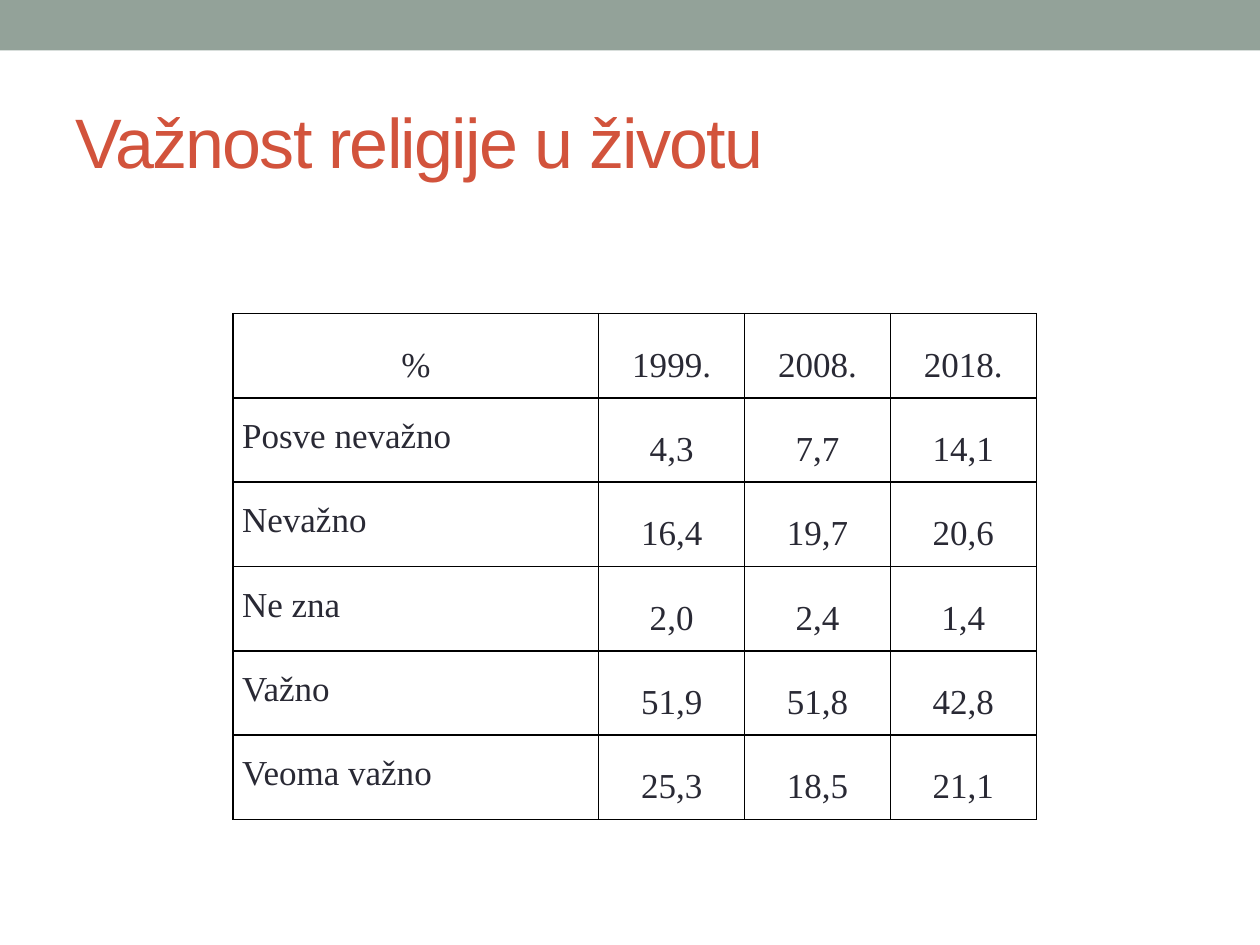
from lxml import etree
from pptx import Presentation
from pptx.dml.color import RGBColor
from pptx.enum.shapes import MSO_SHAPE
from pptx.enum.text import MSO_ANCHOR, PP_ALIGN
from pptx.oxml.ns import qn
from pptx.util import Cm, Pt

RECTANGLE = MSO_SHAPE.RECTANGLE
TOP, MIDDLE = MSO_ANCHOR.TOP, MSO_ANCHOR.MIDDLE
CENTER, JUSTIFY = PP_ALIGN.CENTER, PP_ALIGN.JUSTIFY
COLORS = {
    "band": "93A299",
    "title": "D2533C",
    "text": "292934",
    "border": "000000",
}
ROWS = [
    ("%", "1999.", "2008.", "2018."),
    ("Posve nevažno", "4,3", "7,7", "14,1"),
    ("Nevažno", "16,4", "19,7", "20,6"),
    ("Ne zna", "2,0", "2,4", "1,4"),
    ("Važno", "51,9", "51,8", "42,8"),
    ("Veoma važno", "25,3", "18,5", "21,1"),
]
COLUMN_WIDTHS = [Cm(7.37)] + [Cm(2.94)] * 3
ROW_HEIGHT = Cm(1.7)


def format_run(run, font_name, size, color):
    run.font.name = font_name
    run.font.size = Pt(size)
    run.font.color.rgb = RGBColor.from_string(COLORS[color])


def add_borders(cell):
    properties = cell._tc.get_or_add_tcPr()
    for index, side in enumerate(("lnL", "lnR", "lnT", "lnB")):
        line = etree.Element(qn(f"a:{side}"), w=str(Pt(1)))
        fill = etree.SubElement(line, qn("a:solidFill"))
        etree.SubElement(fill, qn("a:srgbClr"), val=COLORS["border"])
        properties.insert(index, line)


presentation = Presentation()
presentation.slide_width = Cm(25.4)
presentation.slide_height = Cm(19.05)
slide = presentation.slides.add_slide(presentation.slide_layouts[6])

band = slide.shapes.add_shape(RECTANGLE, 0, 0, presentation.slide_width, Cm(1.02))
band.shadow.inherit = False
band.fill.solid()
band.fill.fore_color.rgb = RGBColor.from_string(COLORS["band"])
band.line.fill.background()

title = slide.shapes.add_textbox(Cm(1.27), Cm(1.47), Cm(22.86), Cm(2.74))
title.text_frame.word_wrap = True
title.text_frame.vertical_anchor = MIDDLE
title.text_frame.text = "Važnost religije u životu"
title_run = title.text_frame.paragraphs[0].runs[0]
format_run(title_run, "Arial", 40, "title")
title_run.font._element.set("spc", "-100")

table = slide.shapes.add_table(
    len(ROWS), len(COLUMN_WIDTHS), Cm(4.7), Cm(6.32),
    sum(COLUMN_WIDTHS), ROW_HEIGHT * len(ROWS),
).table
for column, width in zip(table.columns, COLUMN_WIDTHS):
    column.width = width

for row_index, values in enumerate(ROWS):
    table.rows[row_index].height = ROW_HEIGHT
    for column_index, value in enumerate(values):
        is_label = row_index > 0 and column_index == 0
        cell = table.cell(row_index, column_index)
        cell.fill.background()
        cell.margin_left = cell.margin_right = Cm(0.18)
        cell.margin_top = cell.margin_bottom = 0
        cell.vertical_anchor = TOP if is_label else MIDDLE
        cell.text_frame.text = value
        paragraph = cell.text_frame.paragraphs[0]
        paragraph.alignment = JUSTIFY if is_label else CENTER
        paragraph.line_spacing = 1.5
        paragraph.space_before = Pt(6)
        format_run(paragraph.runs[0], "Times New Roman", 20, "text")
        paragraph.runs[0].font.bold = False
        add_borders(cell)

presentation.save("out.pptx")
